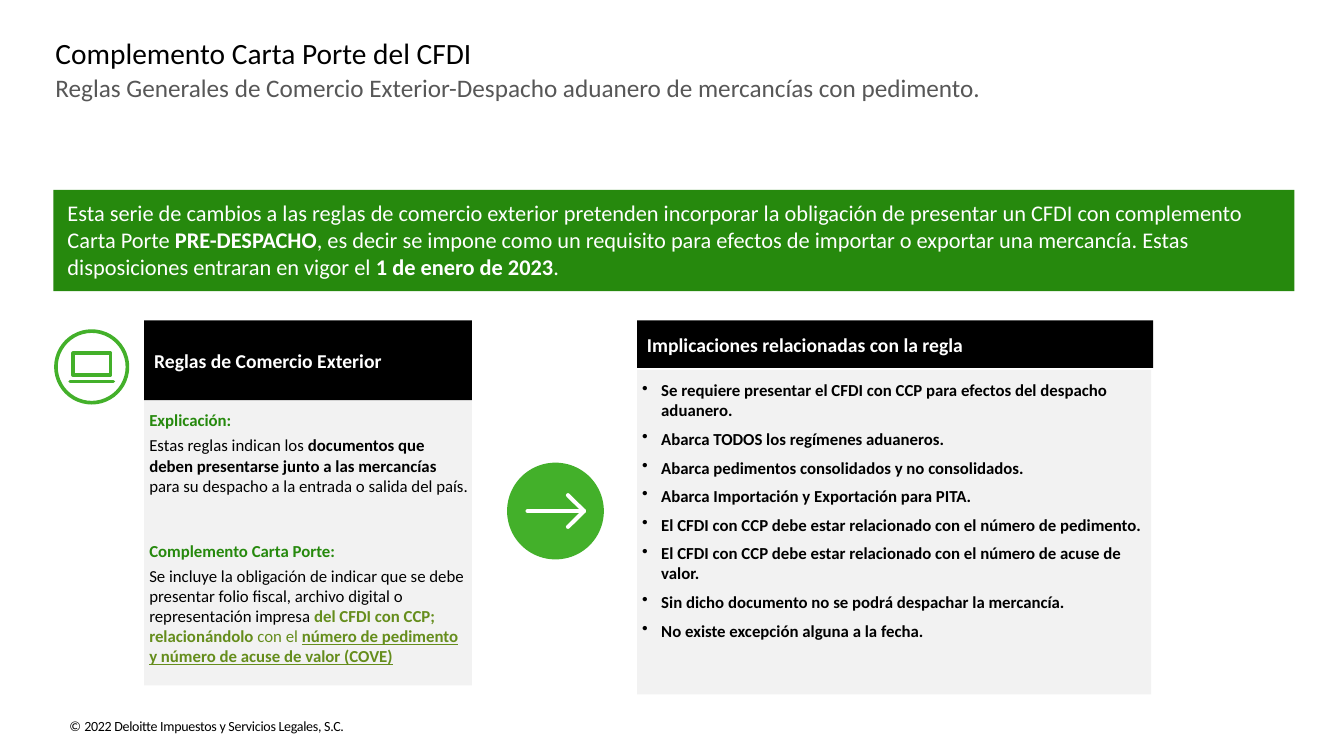
import pptx
import pptx.util
import pptx.dml.color
import pptx.enum.shapes
import pptx.enum.text
import pptx.oxml.ns
from lxml import etree

COLORS = {
    "banner": "26890D",
    "icon": "43B02A",
    "olive": "658D1C",
    "panel": "F2F2F2",
    "gray": "575757",
    "black": "000000",
    "white": "FFFFFF",
}
FONT = "Calibri"
WIDTH = pptx.util.Inches(13.33)
HEIGHT = pptx.util.Inches(7.5)
LEFT_X, RIGHT_X, CARDS_Y = 10.73, 47.4, 42.4
LEFT_W = 24.38
SHAPES = pptx.enum.shapes.MSO_SHAPE
MIDDLE = pptx.enum.text.MSO_ANCHOR.MIDDLE
TOP = pptx.enum.text.MSO_ANCHOR.TOP

IMPLICATIONS = [
    "Se requiere presentar el CFDI con CCP para efectos del despacho aduanero.",
    "Abarca TODOS los regímenes aduaneros.",
    "Abarca pedimentos consolidados y no consolidados.",
    "Abarca Importación y Exportación para PITA.",
    "El CFDI con CCP debe estar relacionado con el número de pedimento.",
    "El CFDI con CCP debe estar relacionado con el número de acuse de valor.",
    "Sin dicho documento no se podrá despachar la mercancía.",
    "No existe excepción alguna a la fecha.",
]


def rgb(name):
    return pptx.dml.color.RGBColor.from_string(COLORS[name])


def share_x(value):
    return round(WIDTH * value / 100)


def share_y(value):
    return round(HEIGHT * value / 100)


def place(x, y, w, h):
    return share_x(x), share_y(y), share_x(w), share_y(h)


def add_block(s, area, fill=None, line=None, kind=SHAPES.RECTANGLE):
    sp = s.shapes.add_shape(kind, *place(*area))
    sp.shadow.inherit = False
    if fill:
        sp.fill.solid()
        sp.fill.fore_color.rgb = rgb(fill)
    else:
        sp.fill.background()
    if line:
        sp.line.color.rgb = rgb(line)
        sp.line.width = pptx.util.Pt(2.6)
    else:
        sp.line.fill.background()
    return sp


def add_stroke(s, start, end, color, width):
    sp = s.shapes.add_connector(
        pptx.enum.shapes.MSO_CONNECTOR.STRAIGHT,
        share_x(start[0]), share_y(start[1]), share_x(end[0]), share_y(end[1]))
    sp.line.color.rgb = rgb(color)
    sp.line.width = pptx.util.Pt(width)
    sp.line._get_or_add_ln().set("cap", "rnd")
    etree.SubElement(sp._element.spPr, pptx.oxml.ns.qn("a:effectLst"))


def set_frame(sp, insets, anchor=TOP):
    tf = sp.text_frame
    tf.word_wrap = True
    tf.vertical_anchor = anchor
    tf.margin_left, tf.margin_top, tf.margin_right, tf.margin_bottom = (
        pptx.util.Inches(i) for i in insets)
    return tf


def add_paragraph(tf, runs, size, before=0, after=0, spacing=1.0, bullet=False):
    first = tf.paragraphs[0]
    p = tf.add_paragraph() if first.runs else first
    p.alignment = pptx.enum.text.PP_ALIGN.LEFT
    p.space_before = pptx.util.Pt(before)
    p.space_after = pptx.util.Pt(after)
    p.line_spacing = spacing
    if bullet:
        pPr = p._p.get_or_add_pPr()
        pPr.set("marL", str(pptx.util.Inches(0.21)))
        pPr.set("indent", str(pptx.util.Inches(-0.19)))
        etree.SubElement(pPr, pptx.oxml.ns.qn("a:buChar")).set("char", "•")
    for text, color, style in runs:
        r = p.add_run()
        r.text = text
        r.font.name = FONT
        r.font.size = pptx.util.Pt(size)
        r.font.color.rgb = rgb(color)
        r.font.bold = "b" in style
        r.font.underline = "u" in style
    return p


def add_label(s, area, runs, size, insets=(0, 0, 0, 0)):
    tf = set_frame(s.shapes.add_textbox(*place(*area)), insets)
    return add_paragraph(tf, runs, size)


def add_header(s, area, text):
    tf = set_frame(add_block(s, area, "black"), (0.1,) * 4, MIDDLE)
    add_paragraph(tf, [(text, "white", "b")], 14, spacing=1.06)


def add_panel(s, area, left_inset):
    return set_frame(add_block(s, area, "panel"), (left_inset, 0.1, 0.02, 0.02))


def add_banner(s):
    add_block(s, (3.97, 25.1, 92.35, 13.4), "banner")
    add_label(s, (5.02, 26.4, 89.95, 10.8), [
        ("Esta serie de cambios a las reglas de comercio exterior pretenden "
         "incorporar la obligación de presentar un CFDI con complemento "
         "Carta Porte ", "white", ""),
        ("PRE-DESPACHO", "white", "b"),
        (", es decir se impone como un requisito para efectos de importar o "
         "exportar una mercancía. Estas disposiciones entraran en vigor el ",
         "white", ""),
        ("1 de enero de 2023", "white", "b"),
        (".", "white", ""),
    ], 16)


def add_rules_card(s):
    tf = add_panel(s, (LEFT_X, 52.93, LEFT_W, 37.73), 0.05)
    add_paragraph(tf, [("Explicación:", "banner", "b")], 12)
    add_paragraph(tf, [
        ("Estas reglas indican los ", "black", ""),
        ("documentos que deben presentarse junto a las mercancías ", "black", "b"),
        ("para su despacho a la entrada o salida del país.", "black", ""),
    ], 12, before=3.4)
    add_paragraph(tf, [("Complemento Carta Porte:", "banner", "b")], 12, before=32)
    add_paragraph(tf, [
        ("Se incluye la obligación de indicar que se debe presentar folio "
         "fiscal, archivo digital o representación impresa ", "black", ""),
        ("del CFDI con CCP; relacionándolo ", "olive", "b"),
        ("con el ", "olive", ""),
        ("número de pedimento y número de acuse de valor (COVE)", "olive", "bu"),
    ], 12, before=3.4)
    add_header(s, (LEFT_X, CARDS_Y, LEFT_W, 10.53), "Reglas de Comercio Exterior")


def add_implications_card(s):
    tf = add_panel(s, (RIGHT_X, 48.93, 38.25, 42.93), 0.03)
    for text in IMPLICATIONS:
        add_paragraph(tf, [(text, "black", "b")], 12, after=6, bullet=True)
    add_header(s, (RIGHT_X, CARDS_Y, 38.4, 6.27),
               "Implicaciones relacionadas con la regla")


def add_laptop_icon(s):
    add_block(s, (4.16, 43.8, 5.32, 9.47), line="icon", kind=SHAPES.OVAL)
    add_block(s, (5.44, 46.73, 2.78, 2.87), line="icon")
    add_stroke(s, (5.21, 50.47), (8.44, 50.47), "icon", 2.4)


def add_arrow_icon(s):
    add_block(s, (37.73, 61.2, 7.2, 12.8), "icon", kind=SHAPES.OVAL)
    tip = (43.45, 67.6)
    for start in [(39.25, 67.6), (42.26, 65.5), (42.26, 69.7)]:
        add_stroke(s, start, tip, "white", 2.9)


def main():
    prs = pptx.Presentation()
    prs.slide_width, prs.slide_height = WIDTH, HEIGHT
    s = prs.slides.add_slide(prs.slide_layouts[6])
    add_label(s, (4.13, 4.67, 91.8, 5.33),
              [("Complemento Carta Porte del CFDI", "black", "")], 21)
    add_label(s, (4.13, 9.6, 91.8, 11.07),
              [("Reglas Generales de Comercio Exterior-Despacho aduanero de "
                "mercancías con pedimento.", "gray", "")], 18)
    add_banner(s)
    add_rules_card(s)
    add_laptop_icon(s)
    add_implications_card(s)
    add_arrow_icon(s)
    p = add_label(s, (4.43, 94.27, 22.13, 3.6), [
        ("© ", "black", ""),
        ("2022 Deloitte Impuestos y Servicios Legales, S.C.", "black", ""),
    ], 10, (0.1, 0.05, 0.1, 0.05))
    p.runs[1].font._element.set("spc", "-20")
    prs.save("out.pptx")


if __name__ == "__main__":
    main()
